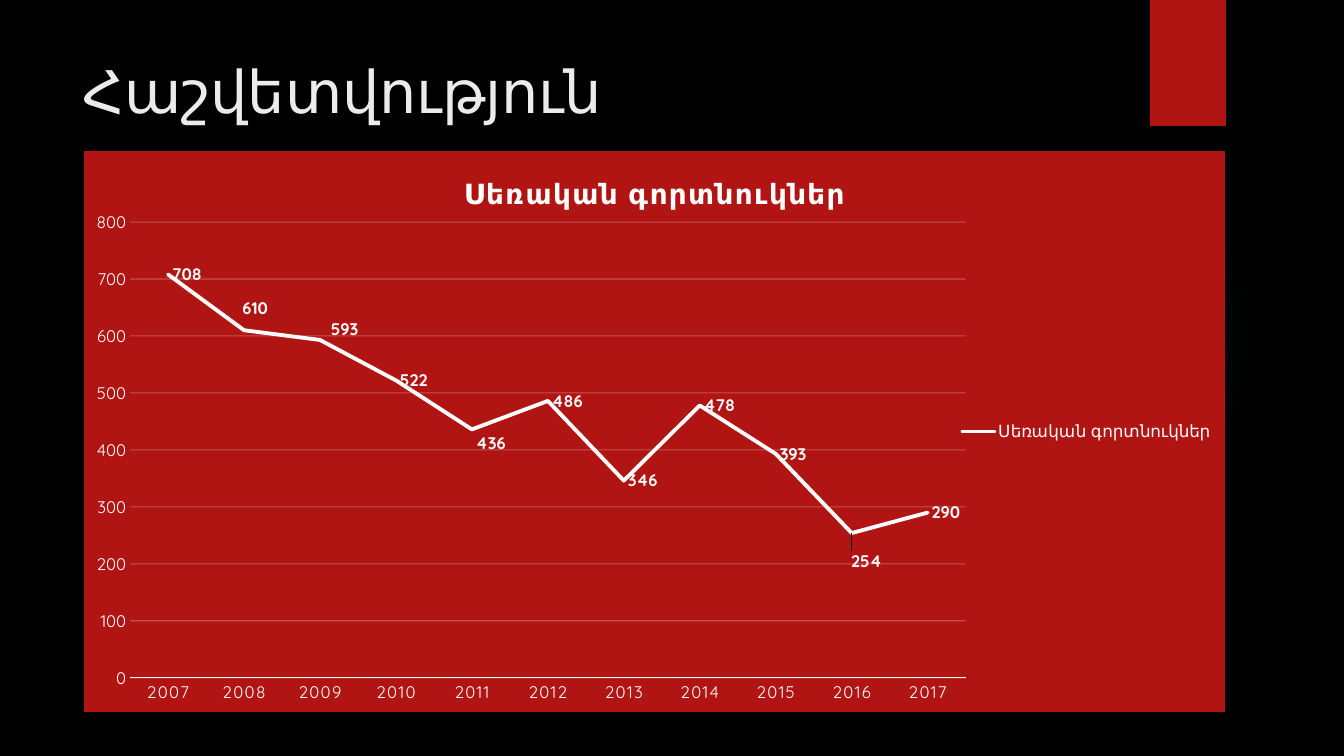
import lxml.etree
import pptx
import pptx.chart.data
import pptx.dml.color
import pptx.enum.chart
import pptx.enum.shapes
import pptx.enum.text
import pptx.oxml
import pptx.oxml.ns
import pptx.util

PX = 914400 / 100.8
FONT = "Quicksand"
WHITE = "FFFFFF"
RED = "B01513"
TEAL = "50B9C1"
NAMESPACES = pptx.oxml.ns.nsdecls("a", "c")
qn = pptx.oxml.ns.qn

SERIES_NAME = "Սեռական գորտնուկներ"
CASES = {
    "2007": 708, "2008": 610, "2009": 593, "2010": 522, "2011": 436, "2012": 486,
    "2013": 346, "2014": 478, "2015": 393, "2016": 254, "2017": 290,
}
# Label shifts from the default place, as shares of the chart's width and height
LABEL_SHIFTS = {1: (-0.005, -0.04), 2: (0.006, -0.02), 4: (0, 0.025), 9: (-0.004, 0.05)}


def px(*lengths):
    return [pptx.util.Emu(round(length * PX)) for length in lengths]


def color(value):
    return pptx.dml.color.RGBColor.from_string(value)


def parse(xml):
    return pptx.oxml.parse_xml(xml)


def format_font(font, size, fill=WHITE, bold=False, spacing=0):
    font.name = FONT
    font.size = pptx.util.Pt(size)
    font.bold = bold
    font.color.rgb = color(fill)
    if spacing:
        font._element.set("spc", str(spacing))


def format_line(line, width, fill=WHITE):
    line.color.rgb = color(fill)
    line.width = pptx.util.Pt(width)


def manual_layout(x, y, size=None):
    """Return a c:layout element; with a size it places the inner plot area."""
    values = {"x": x, "y": y}
    modes = ""
    if size:
        modes = '<c:layoutTarget val="inner"/><c:xMode val="edge"/><c:yMode val="edge"/>'
        values.update(w=size[0], h=size[1])
    parts = "".join(f'<c:{name} val="{value}"/>' for name, value in values.items())
    return parse(f"<c:layout {NAMESPACES}><c:manualLayout>{modes}{parts}"
                 "</c:manualLayout></c:layout>")


def add_decoration(page, kind, *place):
    shape = page.shapes.add_shape(kind, *px(*place))
    shape.shadow.inherit = False
    shape.line.fill.background()
    shape.fill.solid()
    shape.fill.fore_color.rgb = color(RED)
    return shape


def add_glow(page):
    glow = add_decoration(page, pptx.enum.shapes.MSO_SHAPE.OVAL, 949, 184, 310, 310)
    stops = "".join(
        f'<a:gs pos="{place}000"><a:srgbClr val="{TEAL}"><a:alpha val="{alpha}000"/>'
        "</a:srgbClr></a:gs>"
        for place, alpha in ((0, 7), (36, 6), (69, 0)))
    gradient = parse(
        f'<a:gradFill {NAMESPACES}><a:gsLst>{stops}</a:gsLst><a:path path="circle">'
        '<a:fillToRect l="50000" t="50000" r="50000" b="50000"/></a:path></a:gradFill>')
    solid = glow._element.spPr.find(qn("a:solidFill"))
    solid.getparent().replace(solid, gradient)


def format_title(page, text):
    title = page.shapes.title
    title.left, title.top, title.width, title.height = px(72, 50, 1037, 154)
    frame = title.text_frame
    frame.word_wrap = True
    frame.vertical_anchor = pptx.enum.text.MSO_ANCHOR.TOP
    para = frame.paragraphs[0]
    para.alignment = pptx.enum.text.PP_ALIGN.LEFT
    span = para.add_run()
    span.text = text
    format_font(span.font, 42, "EBEBEB")
    page.shapes.element.append(title.element)


def format_chart_area(chart):
    solid = f'<a:solidFill><a:srgbClr val="{RED}"/></a:solidFill>'
    area = parse(f'<c:spPr {NAMESPACES}>{solid}<a:ln w="9525">{solid}</a:ln></c:spPr>')
    chart.element.find(qn("c:chart")).addnext(area)
    plot_area = chart.element.find(".//" + qn("c:plotArea"))
    for layout in plot_area.findall(qn("c:layout")):
        plot_area.remove(layout)
    plot_area.insert(0, manual_layout(0.04, 0.126, (0.733, 0.814)))


def format_axes(chart):
    for axis in (chart.category_axis, chart.value_axis):
        axis.major_tick_mark = axis.minor_tick_mark = pptx.enum.chart.XL_TICK_MARK.NONE
    years, counts = chart.category_axis, chart.value_axis
    format_font(years.tick_labels.font, 12, spacing=100)
    format_line(years.format.line, 1)
    format_font(counts.tick_labels.font, 12)
    counts.format.line.fill.background()
    counts.minimum_scale, counts.maximum_scale, counts.major_unit = 0, 800, 100
    grid = counts.major_gridlines.format.line
    format_line(grid, 0.75)
    stroke = counts.major_gridlines._xAx.find(".//" + qn("c:majorGridlines"))
    tone = stroke.find(".//" + qn("a:srgbClr"))
    lxml.etree.SubElement(tone, qn("a:alpha")).set("val", "25000")


def format_series(series):
    series.smooth = False
    format_line(series.format.line, 2.75)
    series.format.line._get_or_add_ln().set("cap", "rnd")
    right = pptx.enum.chart.XL_LABEL_POSITION.RIGHT
    labels = series.data_labels
    labels.show_value = True
    labels.position = right
    format_font(labels.font, 12, bold=True)
    for index, shift in LABEL_SHIFTS.items():
        label = series.points[index].data_label
        label.position = right
        format_font(label.font, 12, bold=True)
    for element in series._element.iter(qn("c:dLbl")):
        place = element.find(qn("c:idx"))
        place.addnext(manual_layout(*LABEL_SHIFTS[int(place.get("val"))]))


def add_cases_chart(page):
    data = pptx.chart.data.CategoryChartData()
    data.categories = list(CASES)
    data.add_series(SERIES_NAME, CASES.values())
    chart = page.shapes.add_chart(
        pptx.enum.chart.XL_CHART_TYPE.LINE, *px(84, 151, 1141, 561), data).chart
    format_font(chart.font, 10)
    chart.has_title = True
    chart.chart_title.include_in_layout = False
    para = chart.chart_title.text_frame.paragraphs[0]
    span = para.add_run()
    span.text = SERIES_NAME
    format_font(span.font, 19.9, bold=True, spacing=100)
    chart.has_legend = True
    chart.legend.position = pptx.enum.chart.XL_LEGEND_POSITION.RIGHT
    chart.legend.include_in_layout = False
    format_font(chart.legend.font, 12)
    format_chart_area(chart)
    format_axes(chart)
    chart.plots[0].vary_by_categories = False
    format_series(chart.series[0])


def main():
    deck = pptx.Presentation()
    deck.slide_width, deck.slide_height = px(1344, 756)
    page = deck.slides.add_slide(deck.slide_layouts.get_by_name("Title Only"))
    page.background.fill.solid()
    page.background.fill.fore_color.rgb = color("000000")
    add_glow(page)
    add_decoration(page, pptx.enum.shapes.MSO_SHAPE.RECTANGLE, 1150, 0, 76, 126)
    format_title(page, "Հաշվետվություն")
    add_cases_chart(page)
    deck.save("out.pptx")


if __name__ == "__main__":
    main()
